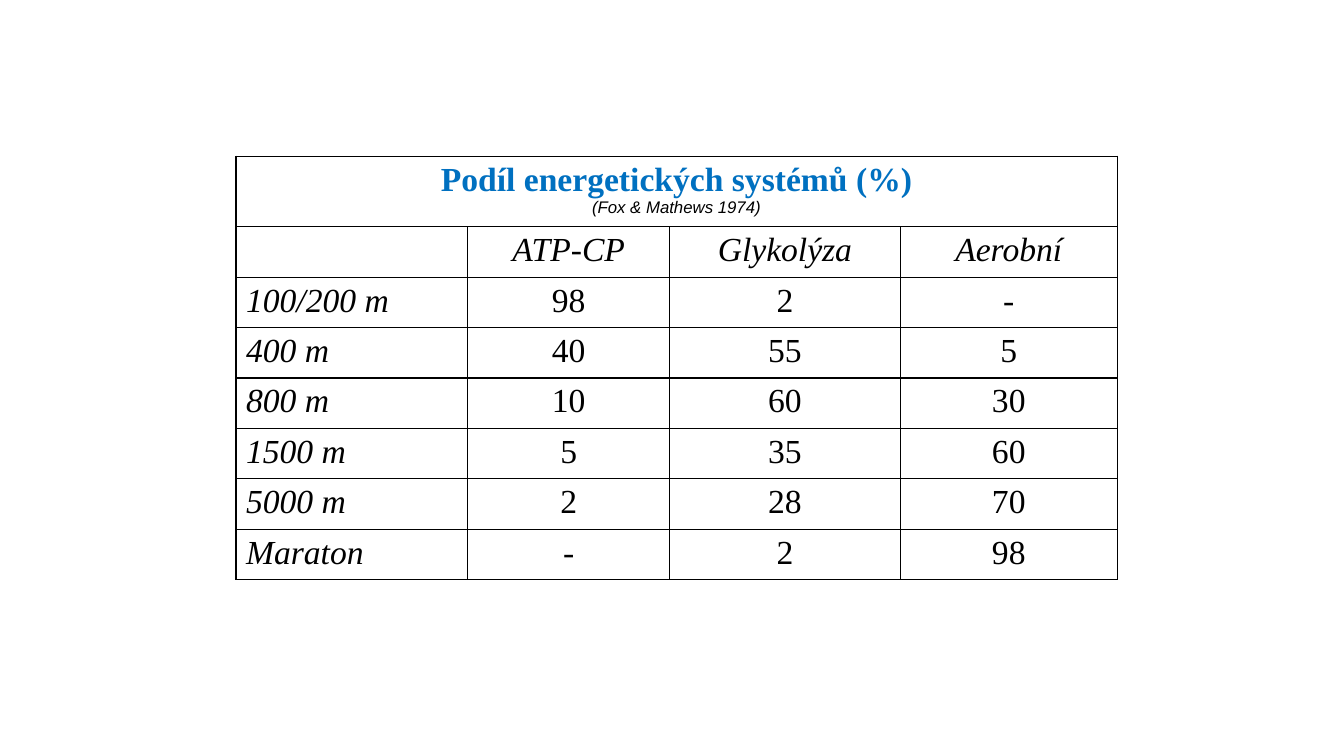
from lxml import etree
from pptx import Presentation
from pptx.dml.color import RGBColor
from pptx.enum.text import PP_ALIGN
from pptx.oxml.ns import qn
from pptx.util import Inches, Pt

CENTER, LEFT = PP_ALIGN.CENTER, PP_ALIGN.LEFT
BLACK = RGBColor(0x00, 0x00, 0x00)
BLUE = RGBColor(0x00, 0x70, 0xC0)

COLUMN_WIDTHS = [2.3, 2, 2.29, 2.15]
TITLE_HEIGHT, ROW_HEIGHT = 0.7, 0.5
ROWS = [
    ["", "ATP-CP", "Glykolýza", "Aerobní"],
    ["100/200 m", "98", "2", "-"],
    ["400 m", "40", "55", "5"],
    ["800 m", "10", "60", "30"],
    ["1500 m", "5", "35", "60"],
    ["5000 m", "2", "28", "70"],
    ["Maraton", "-", "2", "98"],
]


def write_paragraph(paragraph, text, alignment=CENTER, size=24,
                    font_name="Times New Roman", color=BLACK,
                    bold=False, italic=False):
    paragraph.text = text
    paragraph.alignment = alignment
    font = paragraph.font
    font.name, font.size = font_name, Pt(size)
    font.bold, font.italic = bold, italic
    font.color.rgb = color


def add_borders(cell):
    properties = cell._tc.get_or_add_tcPr()
    for side in ("a:lnL", "a:lnR", "a:lnT", "a:lnB"):
        line = etree.SubElement(properties, qn(side), w=str(Pt(1)))
        fill = etree.SubElement(line, qn("a:solidFill"))
        etree.SubElement(fill, qn("a:srgbClr"), val=str(BLACK))


presentation = Presentation()
presentation.slide_width = Inches(13.33)
presentation.slide_height = Inches(7.5)
slide = presentation.slides.add_slide(presentation.slide_layouts[6])

# Table grid
table_height = TITLE_HEIGHT + ROW_HEIGHT * len(ROWS)
table = slide.shapes.add_table(
    len(ROWS) + 1, len(COLUMN_WIDTHS), Inches(2.34), Inches(1.55),
    Inches(sum(COLUMN_WIDTHS)), Inches(table_height)).table
table.first_row = False
table.horz_banding = False
for column, width in zip(table.columns, COLUMN_WIDTHS):
    column.width = Inches(width)
for row in table.rows:
    row.height = Inches(ROW_HEIGHT)
table.rows[0].height = Inches(TITLE_HEIGHT)
for cell in table.iter_cells():
    add_borders(cell)
    cell.fill.background()

# Title row with its citation
title_cell = table.cell(0, 0)
title_cell.merge(table.cell(0, len(COLUMN_WIDTHS) - 1))
title_frame = title_cell.text_frame
write_paragraph(title_frame.paragraphs[0], "Podíl energetických systémů (%)",
                color=BLUE, bold=True)
write_paragraph(title_frame.add_paragraph(), "(Fox & Mathews 1974)",
                size=12, font_name="Arial", italic=True)

# Headings and race distances are italic, shares are upright
for row_index, values in enumerate(ROWS, start=1):
    for column_index, value in enumerate(values):
        if value:
            paragraph = table.cell(row_index, column_index).text_frame.paragraphs[0]
            write_paragraph(paragraph, value,
                            alignment=CENTER if column_index else LEFT,
                            italic=row_index == 1 or column_index == 0)

presentation.save("out.pptx")
